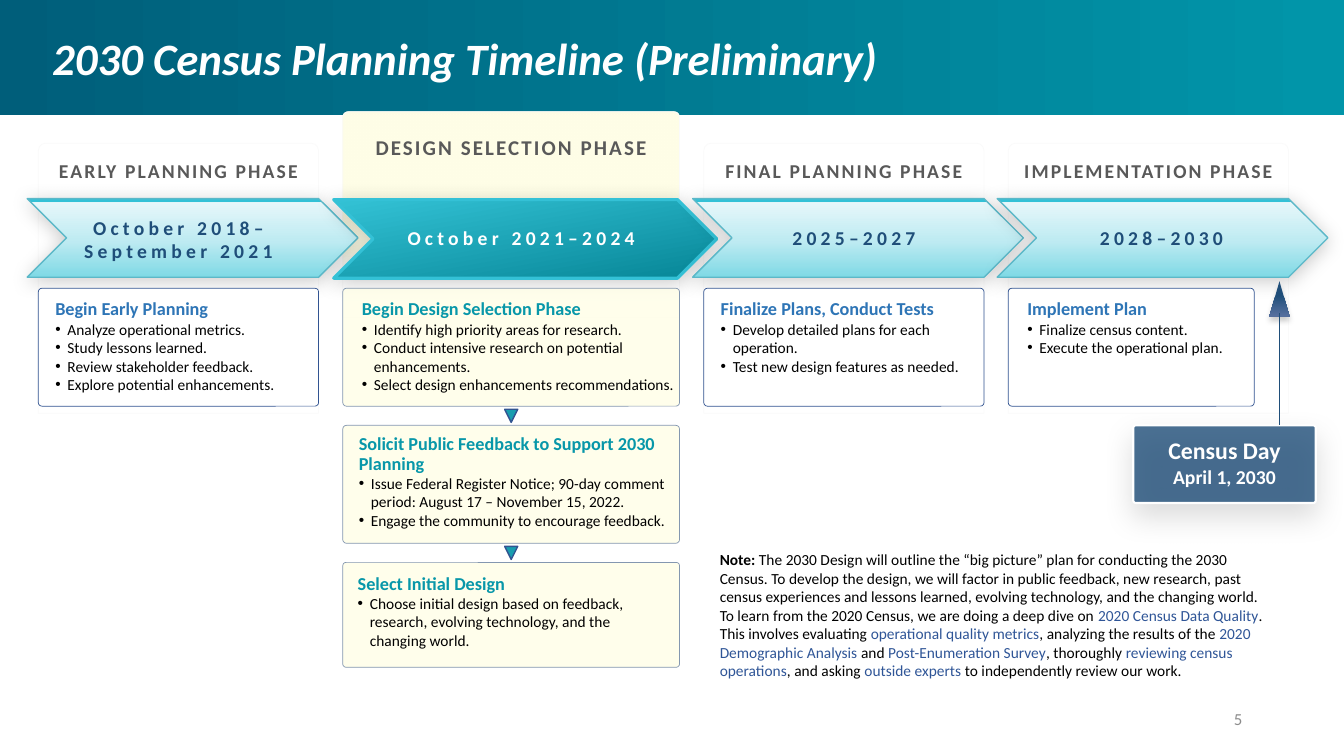
import pptx
import pptx.util
import pptx.dml.color
import pptx.enum.shapes
import pptx.enum.text
import pptx.oxml
import pptx.oxml.ns

KIND = pptx.enum.shapes.MSO_SHAPE
ALIGN = pptx.enum.text.PP_ALIGN
MID = pptx.enum.text.MSO_ANCHOR.MIDDLE
rgb = pptx.dml.color.RGBColor.from_string

WHITE, BLACK = rgb("FFFFFF"), rgb("000000")
GREY, PALE, NUM = rgb("595959"), rgb("FAFAFA"), rgb("8C8C8C")
NAVY, BLUE, LINK = rgb("1F4E79"), rgb("2E75B6"), rgb("2F5597")
EDGE, SLATE = rgb("325491"), rgb("8497B0")
TEAL, MARK, RIM = rgb("0897A9"), rgb("189DAF"), rgb("5CB8C8")
AQUA, CREAM = rgb("34C1D6"), rgb("FFFEE7")

# Grid: 75 rows on the slide's height, square cells of a tenth of an inch
HIGH, ROWS = 7.5, 75
WIDE, COLS = 13.33, 133.3
GAP = 2.4


def unit(n):
    return pptx.util.Inches(n * HIGH / ROWS)


def node(tag, home, **attrs):
    item = pptx.oxml.parse_xml(f"<a:{tag} {pptx.oxml.ns.nsdecls('a')}/>")
    for key, val in attrs.items():
        item.set(key, str(val))
    home.append(item)
    return item


def tint(home, color, alpha=100):
    clr = node("srgbClr", home, val=color)
    if alpha < 100:
        node("alpha", clr, val=alpha * 1000)


def blend(shape, stops, angle):
    """Fill a shape with a gradient of (place, colour, alpha) stops."""
    shape.fill.background()
    props = shape.element.spPr
    old = props.find(pptx.oxml.ns.qn("a:noFill"))
    grad = node("gradFill", props, rotWithShape=1)
    props.replace(old, grad)
    items = node("gsLst", grad)
    for place, color, *alpha in stops:
        tint(node("gs", items, pos=place * 1000), color, *alpha)
    node("lin", grad, ang=angle * 60000, scaled=0)


def draw(slide, kind, box, fill=None, line=None, width=0.5, adj=(),
         alpha=100, grad=None, angle=90, shade=None):
    shape = slide.shapes.add_shape(kind, *map(unit, box))
    shape.shadow.inherit = False
    for i, val in enumerate(adj):
        shape.adjustments[i] = val
    if grad:
        blend(shape, grad, angle)
    else:
        shape.fill.solid()
        shape.fill.fore_color.rgb = fill
        if alpha < 100:
            clr = shape.element.spPr.find(".//" + pptx.oxml.ns.qn("a:srgbClr"))
            node("alpha", clr, val=alpha * 1000)
    if line is None:
        shape.line.fill.background()
    else:
        shape.line.color.rgb = line
        shape.line.width = pptx.util.Pt(width)
    if shade:
        dark, blur, dist = shade
        home = shape.element.spPr.find(pptx.oxml.ns.qn("a:effectLst"))
        cast = node("outerShdw", home, blurRad=blur * 12700, dist=dist * 12700,
                    dir=5400000, algn="t", rotWithShape=0)
        tint(cast, BLACK, dark)
    return shape


def write(slide, box, paras, align=ALIGN.LEFT, anchor=None, lead=None):
    """Each paragraph is a list of (text, size, colour, bold, spacing) runs."""
    frame = slide.shapes.add_textbox(*map(unit, box)).text_frame
    frame.word_wrap = True
    if anchor:
        frame.vertical_anchor = anchor
    for i, runs in enumerate(paras):
        para = frame.add_paragraph() if i else frame.paragraphs[0]
        para.alignment = align
        if lead and (not i or align == ALIGN.CENTER):
            para.line_spacing = lead
        for words, size, color, bold, *space in runs:
            run = para.add_run()
            run.text = words
            run.font.name = "Calibri"
            run.font.size = pptx.util.Pt(size)
            run.font.bold = bold
            run.font.color.rgb = color
            if space:
                run.font._element.set("spc", str(space[0]))
    return frame


def banner(slide, box):
    x, y, w, h = box
    draw(slide, KIND.RECTANGLE, box, angle=0,
         grad=[(0, rgb("005E7A")), (99, rgb("0195A9"))])
    frame = write(slide, (x + 4.2, y + 3.2, w - 8.7, 6.8),
                  [[("2030 Census Planning Timeline (Preliminary)", 32, WHITE, True)]],
                  lead=0.9)
    frame.paragraphs[0].runs[0].font.italic = True


def panel(slide, box, key):
    """Frame behind a phase; the key phase stands taller."""
    x, y, w, h = box
    look = dict(adj=(0.028, 0), line=PALE)
    if key:
        draw(slide, KIND.ROUND_2_SAME_RECTANGLE, (x, y - 3.1, w, 20.4), angle=270,
             grad=[(18, rgb("F6F8FC"), 0), (33, CREAM)], **look)
    else:
        draw(slide, KIND.ROUND_2_SAME_RECTANGLE, box, WHITE, **look)


def phase(slide, box, name, dates, shift, key):
    """Chevron with its heading above and its dates inside."""
    x, y, w, h = box
    if key:
        draw(slide, KIND.CHEVRON, (x - 0.9, y + 5.6, w + 4.6, 7.8), line=AQUA,
             width=2.25, grad=[(0, rgb("33C2D5")), (100, rgb("078697"))],
             angle=80, shade=(20, 14, 2))
    else:
        draw(slide, KIND.CHEVRON, (x - 1.1, y + 5.5, w + 5, 7.8), line=RIM, width=1,
             grad=[(4, AQUA), (5, rgb("E6F7FA")), (53, rgb("BFEBF2")),
                   (100, rgb("7FD9E5"))], shade=(20, 14, 2))
    top, size = (y - 1.3, 15) if key else (y + 1.1, 14)
    write(slide, (x, top, w, 3.4), [[(name, size, GREY, True, 150)]], ALIGN.CENTER)
    color = WHITE if key else NAVY
    write(slide, (x + shift, y + 8.7 - len(dates), w, 3.4),
          [[(part, 14, color, True, 300)] for part in dates], ALIGN.CENTER)


def card(slide, box, inset, span, head, points, key, lead=None):
    x, y, w, h = box
    fill, alpha, line, color = ((CREAM, 80, SLATE, TEAL) if key
                                else (WHITE, 100, EDGE, BLUE))
    draw(slide, KIND.ROUNDED_RECTANGLE, box, fill, line, alpha=alpha, adj=(0.031,))
    paras = [[(head, 13, color, True)]] + [[(p, 11, BLACK, False)] for p in points]
    frame = write(slide, (x + inset, y + 0.45, span, h - 1), paras, lead=lead)
    for para in frame.paragraphs[1:]:
        props = para._p.get_or_add_pPr()
        props.set("marL", str(unit(1.2)))
        props.set("indent", str(-unit(1.2)))
        node("buFont", props, typeface="Arial")
        node("buChar", props, char="•")


def stack(slide, box, cards, key):
    """Cards one below the other, with a small arrow in each gap."""
    x, y, w, h = box
    for i, (tall, trim, inset, span, head, points, lead) in enumerate(cards):
        if i:
            tip = draw(slide, KIND.ISOSCELES_TRIANGLE,
                       (x + w / 2 - 0.65, y - 1.6, 1.3, 1.3), MARK, EDGE, 1)
            tip.rotation = 180
        card(slide, (x, y, w - trim, tall), inset, span, head, points, key, lead)
        y += tall + 1.9


def goal(slide, box):
    """Census Day box with its arrow up to the timeline."""
    x, y, w, h = box
    draw(slide, KIND.ROUNDED_RECTANGLE, box, NAVY, WHITE, 1.5, (0.031,), 80,
         shade=(16, 21, 9))
    write(slide, (x + 2, y + 1, w - 4, 3.8),
          [[("Census Day", 17, WHITE, True)], [("April 1, 2030", 14, WHITE, True)]],
          ALIGN.CENTER, lead=pptx.util.Pt(17))
    mid = x + 14.5
    draw(slide, KIND.ISOSCELES_TRIANGLE, (mid - 1, y - 14.3, 2, 3.5),
         grad=[(40, NAVY), (100, rgb("57709F"))], shade=(20, 4, 3))
    stem = slide.shapes.add_connector(
        pptx.enum.shapes.MSO_CONNECTOR.STRAIGHT,
        *map(unit, (mid, y - 11.1, mid, y)))
    stem.line.color.rgb = NAVY
    stem.line.width = pptx.util.Pt(0.5)
    node("effectLst", stem.element.spPr)


def note(slide, box):
    parts = [
        "The 2030 Design will outline the “big picture” plan for conducting the 2030 "
        "Census. To develop the design, we will factor in public feedback, new "
        "research, past census experiences and lessons learned, evolving technology, "
        "and the changing world. To learn from the 2020 Census, we are doing a deep "
        "dive on ",
        "2020 Census Data Quality", ". This involves evaluating ",
        "operational quality metrics", ", analyzing the results of the ",
        "2020 Demographic Analysis", " and ", "Post-Enumeration Survey",
        ", thoroughly ", "reviewing census operations", ", and asking ",
        "outside experts ", "to independently review our work."]
    runs = [(part, 11, LINK if i % 2 else BLACK, False) for i, part in enumerate(parts)]
    write(slide, box, [[("Note: ", 11, BLACK, True)] + runs])


# Phases: width, heading, dates, shift of dates, key phase, cards
# Cards: height, trim of width, text inset, text width, heading, points, leading
PHASES = [
    (27.8, "EARLY PLANNING PHASE", ["October 2018–", "September 2021"], 0, False, [
        (11.7, 0, 0.7, 26.1, "Begin Early Planning", [
            "Analyze operational metrics.", "Study lessons learned.",
            "Review stakeholder feedback.", "Explore potential enhancements."], None)]),
    (33.4, "DESIGN SELECTION PHASE", ["October 2021–2024"], 1, True, [
        (11.7, 0, 0.9, 33.2, "Begin Design Selection Phase", [
            "Identify high priority areas for research.",
            "Conduct intensive research on potential enhancements.",
            "Select design enhancements recommendations."], None),
        (11.7, 0, 0.6, 33.5, "Solicit Public Feedback to Support 2030 Planning", [
            "Issue Federal Register Notice; 90-day comment period: "
            "August 17 – November 15, 2022.",
            "Engage the community to encourage feedback."], pptx.util.Pt(14)),
        (10.4, 0, 0.5, 32.4, "Select Initial Design", [
            "Choose initial design based on feedback, research, evolving "
            "technology, and the changing world."], None)]),
    (27.8, "FINAL PLANNING PHASE", ["2025–2027"], 1, False, [
        (11.7, 0, 0.7, 26.1, "Finalize Plans, Conduct Tests", [
            "Develop detailed plans for each operation.",
            "Test new design features as needed."], None)]),
    (27.8, "IMPLEMENTATION PHASE", ["2028–2030"], 1.3, False, [
        (11.7, 3.4, 0.9, 21.9, "Implement Plan", [
            "Finalize census content.", "Execute the operational plan."], None)]),
]


def main():
    deck = pptx.Presentation()
    deck.slide_width = pptx.util.Inches(WIDE)
    deck.slide_height = pptx.util.Inches(HIGH)
    slide = deck.slides.add_slide(deck.slide_layouts[6])
    banner(slide, (0, 0, COLS, 11.4))
    # Timeline: all frames lie behind all chevrons
    boxes, x = [], 3.8
    for wide, *rest in PHASES:
        boxes.append((x, 14.2, wide, 26.8))
        x += wide + GAP
    for box, row in zip(boxes, PHASES):
        panel(slide, box, row[4])
    for box, (wide, name, dates, shift, key, cards) in zip(boxes, PHASES):
        phase(slide, box, name, dates, shift, key)
        stack(slide, (box[0], 28.6, wide, 37.7), cards, key)
    goal(slide, (112.4, 42.2, 18.1, 7.7))
    note(slide, (70.4, 54.1, 55.8, 14))
    # Slide number
    write(slide, (94.2, 69.3, 30, 4), [[("5", 12, NUM, False)]], ALIGN.RIGHT, MID)
    deck.save("out.pptx")


if __name__ == "__main__":
    main()
